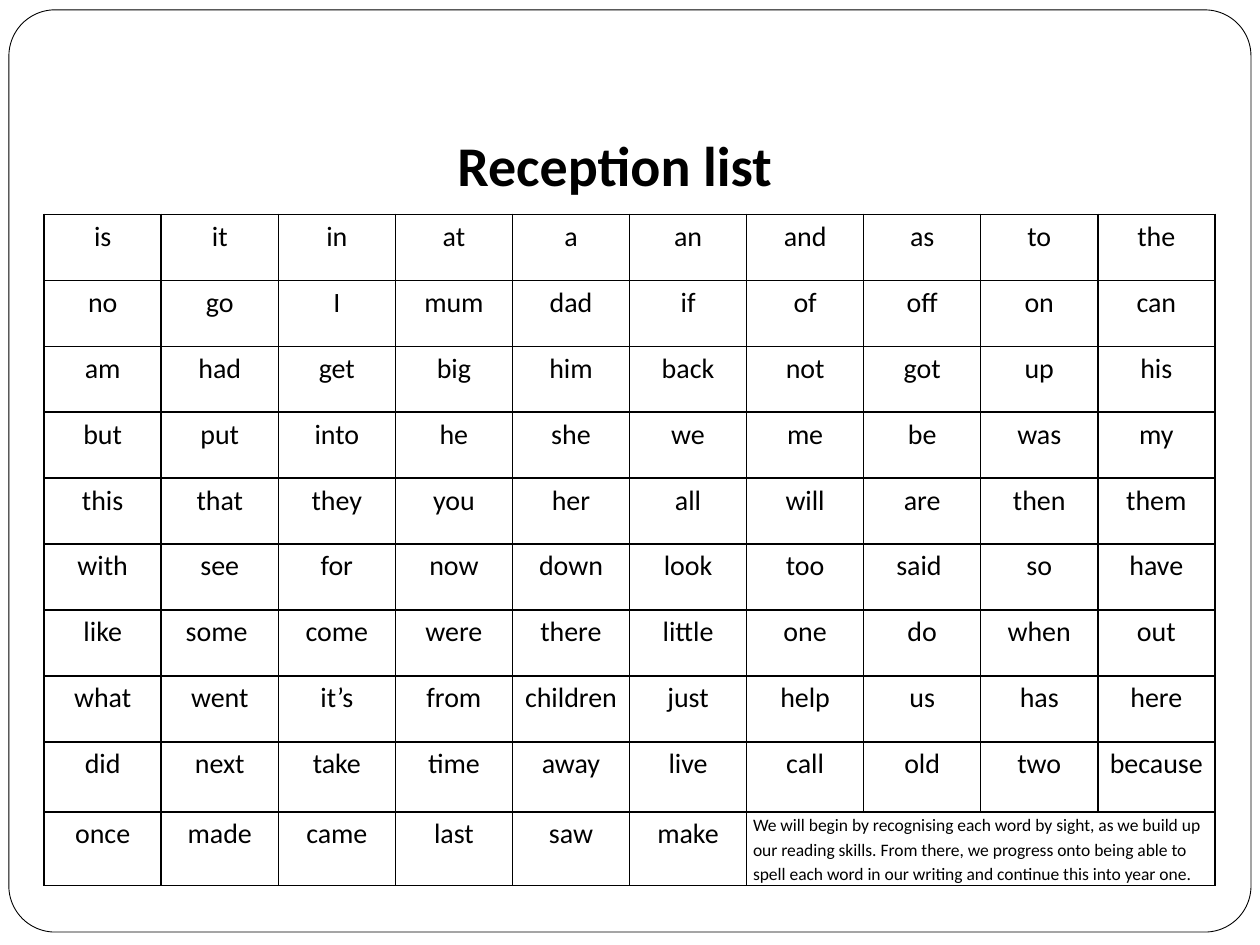
from lxml import etree
from pptx import Presentation
from pptx.dml.color import RGBColor
from pptx.enum.shapes import MSO_SHAPE
from pptx.enum.text import MSO_ANCHOR, MSO_AUTO_SIZE, PP_ALIGN
from pptx.oxml.ns import qn
from pptx.util import Cm, Pt

ROUNDED = MSO_SHAPE.ROUNDED_RECTANGLE
TOP = MSO_ANCHOR.TOP
NO_AUTOFIT = MSO_AUTO_SIZE.NONE
LEFT, CENTER = PP_ALIGN.LEFT, PP_ALIGN.CENTER

TITLE_ONLY = 5
FONT = "Calibri"
COLORS = {"ink": "000000", "paper": "FFFFFF"}

WORD_ROWS = [
    "is,it,in,at,a,an,and,as,to,the",
    "no,go,I,mum,dad,if,of,off,on,can",
    "am,had,get,big,him,back,not,got,up,his",
    "but,put,into,he,she,we,me,be,was,my",
    "this,that,they,you,her,all,will,are,then,them",
    "with,see,for,now,down,look,too,said ,so,have",
    "like,some ,come,were,there,little,one,do,when,out",
    "what,went,it’s,from,children,just,help,us,has,here",
    "did,next,take,time,away,live,call,old,two,because",
    "once,made,came,last,saw,make",
]
NOTE = (
    "We will begin by recognising each word by sight, as we build up our "
    "reading skills. From there, we progress onto being able to spell each "
    "word in our writing and continue this into year one."
)
COLUMNS = 10
COLUMN_WIDTH = Cm(2.36)
ROW_HEIGHT = Cm(1.33)
TALL_ROW, TALL_ROW_HEIGHT = 8, Cm(1.41)


def color(name):
    return RGBColor.from_string(COLORS[name])


def write(text_frame, text, size, alignment, bold=False):
    text_frame.text = text
    paragraph = text_frame.paragraphs[0]
    paragraph.alignment = alignment
    font = paragraph.font
    font.name, font.size, font.bold = FONT, Pt(size), bold
    font.color.rgb = color("ink")
    return paragraph


def add_frame(slide):
    """Draw the rounded page border behind everything else."""
    frame = slide.shapes.add_shape(ROUNDED, Cm(0.18), Cm(0.2), Cm(25.04), Cm(18.59))
    frame.adjustments[0] = 0.05
    frame.shadow.inherit = False
    frame.fill.solid()
    frame.fill.fore_color.rgb = color("paper")
    frame.line.color.rgb = color("ink")
    frame.line.width = Pt(0.5)
    slide.shapes.title._element.addprevious(frame._element)


def place_title(slide, text):
    title = slide.shapes.title
    title.left, title.top, title.width, title.height = Cm(4.09), Cm(2.51), Cm(16.61), Cm(6.25)
    title.text_frame.vertical_anchor = TOP
    title.text_frame.auto_size = NO_AUTOFIT
    write(title.text_frame, text, 32, CENTER, bold=True)


def style_cell(cell):
    cell.margin_left = cell.margin_right = Cm(0.13)
    cell.margin_top = cell.margin_bottom = 0
    properties = cell._tc.get_or_add_tcPr()
    for side in ("a:lnL", "a:lnR", "a:lnT", "a:lnB"):
        border = etree.SubElement(properties, qn(side), w=str(Pt(1)))
        fill = etree.SubElement(border, qn("a:solidFill"))
        etree.SubElement(fill, qn("a:srgbClr"), val=COLORS["ink"])
    cell.fill.background()


def add_word_table(slide):
    row_count = len(WORD_ROWS)
    table = slide.shapes.add_table(
        row_count, COLUMNS, Cm(0.89), Cm(4.32),
        COLUMN_WIDTH * COLUMNS, ROW_HEIGHT * row_count,
    ).table
    table.first_row = table.horz_banding = False
    for column in table.columns:
        column.width = COLUMN_WIDTH
    for row in table.rows:
        row.height = ROW_HEIGHT
    table.rows[TALL_ROW].height = TALL_ROW_HEIGHT
    for cell in table.iter_cells():
        style_cell(cell)

    for row_index, line in enumerate(WORD_ROWS):
        words = line.split(",")
        for column_index, word in enumerate(words):
            cell = table.cell(row_index, column_index)
            write(cell.text_frame, word, 16, CENTER).line_spacing = 1.15

    last_row = row_count - 1
    note_cell = table.cell(last_row, len(words))
    note_cell.merge(table.cell(last_row, COLUMNS - 1))
    write(note_cell.text_frame, NOTE, 10, LEFT).line_spacing = 1.15


def main():
    presentation = Presentation()
    presentation.slide_width, presentation.slide_height = Cm(25.4), Cm(19.05)
    slide = presentation.slides.add_slide(presentation.slide_layouts[TITLE_ONLY])
    add_frame(slide)
    place_title(slide, "Reception list")
    add_word_table(slide)
    presentation.save("out.pptx")


if __name__ == "__main__":
    main()
